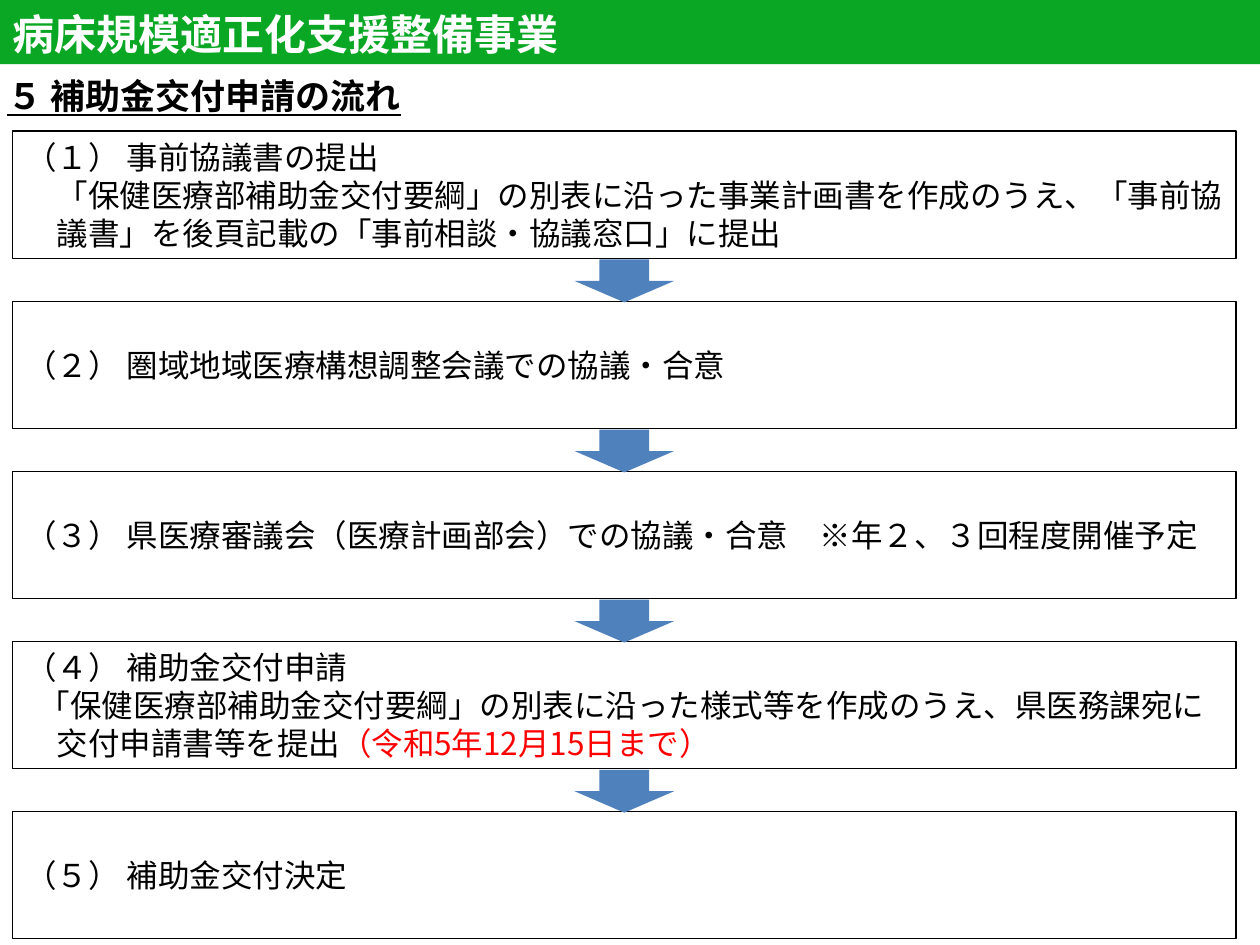
from pptx import Presentation
from pptx.dml.color import RGBColor
from pptx.enum.shapes import MSO_SHAPE
from pptx.enum.text import MSO_ANCHOR, PP_ALIGN
from pptx.oxml.ns import qn
from pptx.util import Inches, Pt

FONT = "Noto Sans CJK JP"
GREEN = RGBColor(0x09, 0xA7, 0x23)
BLUE = RGBColor(0x4F, 0x81, 0xBD)
RED = RGBColor(0xFF, 0x00, 0x00)
BLACK = RGBColor(0x00, 0x00, 0x00)
WHITE = RGBColor(0xFF, 0xFF, 0xFF)

BOX_LEFT, BOX_TOP, BOX_WIDTH, BOX_HEIGHT = 0.1, 1.04, 9.71, 1.01
STEP_PITCH = 1.35
ARROW_WIDTH, ARROW_HEIGHT = 0.79, 0.34
FULL_INDENT, HALF_INDENT = 0.25, 0.11

# Each step is a list of lines: left indent in inches, then (text, colour) runs
STEPS = [
    [
        (0, [("（１） 事前協議書の提出", BLACK)]),
        (FULL_INDENT, [("「保健医療部補助金交付要綱」の別表に沿った事業計画書を作成のうえ、「事前協", BLACK)]),
        (FULL_INDENT, [("議書」を後頁記載の「事前相談・協議窓口」に提出", BLACK)]),
    ],
    [(0, [("（２） 圏域地域医療構想調整会議での協議・合意", BLACK)])],
    [(0, [("（３） 県医療審議会（医療計画部会）での協議・合意　※年２、３回程度開催予定", BLACK)])],
    [
        (0, [("（４） 補助金交付申請", BLACK)]),
        (HALF_INDENT, [("「保健医療部補助金交付要綱」の別表に沿った様式等を作成のうえ、県医務課宛に", BLACK)]),
        (FULL_INDENT, [("交付申請書等を提出", BLACK), ("（令和5年12月15日まで）", RED)]),
    ],
    [(0, [("（５） 補助金交付決定", BLACK)])],
]


def add_block(kind, left, top, width, height, fill=None):
    block = page.shapes.add_shape(kind, Inches(left), Inches(top), Inches(width), Inches(height))
    block.shadow.inherit = False
    block.line.fill.background()
    if fill is None:
        block.fill.background()
    else:
        block.fill.solid()
        block.fill.fore_color.rgb = fill
    frame = block.text_frame
    frame.word_wrap = True
    frame.vertical_anchor = MSO_ANCHOR.MIDDLE
    frame.paragraphs[0].alignment = PP_ALIGN.LEFT
    return block


def add_span(para, text, size, color, bold=False, underline=False):
    """Add a run in the slide font, for both Latin and East Asian characters."""
    span = para.add_run()
    span.text = text
    font = span.font
    font.name, font.size, font.bold, font.underline = FONT, Pt(size), bold, underline
    font.color.rgb = color
    east_asian = span._r.get_or_add_rPr().makeelement(qn("a:ea"), {"typeface": FONT})
    span._r.rPr.find(qn("a:latin")).addnext(east_asian)


deck = Presentation()
deck.slide_width, deck.slide_height = Inches(10), Inches(7.5)
page = deck.slides.add_slide(deck.slide_layouts[6])

# Title band
band = add_block(MSO_SHAPE.RECTANGLE, 0, 0, 10, 0.51, GREEN)
band.text_frame.margin_top = band.text_frame.margin_bottom = 0
para = band.text_frame.paragraphs[0]
para.line_spacing = Pt(31)
add_span(para, "病床規模適正化支援整備事業", 24, WHITE, bold=True)

# Section heading
heading = page.shapes.add_textbox(Inches(-0.04), Inches(0.54), Inches(8.58), Inches(0.44))
heading.text_frame.word_wrap = True
heading.text_frame.vertical_anchor = MSO_ANCHOR.MIDDLE
add_span(heading.text_frame.paragraphs[0], "５ 補助金交付申請の流れ", 20, BLACK, bold=True, underline=True)

# Step boxes
for row, lines in enumerate(STEPS):
    box = add_block(MSO_SHAPE.RECTANGLE, BOX_LEFT, BOX_TOP + row * STEP_PITCH, BOX_WIDTH, BOX_HEIGHT)
    box.line.color.rgb = BLACK
    box.line.width = Pt(0.75)
    frame = box.text_frame
    frame.margin_right = 0
    for number, (indent, spans) in enumerate(lines):
        para = frame.add_paragraph() if number else frame.paragraphs[0]
        para.alignment = PP_ALIGN.LEFT
        para.line_spacing = Pt(21.7)
        para._p.get_or_add_pPr().set("marL", str(Inches(indent)))
        for text, color in spans:
            add_span(para, text, 18, color)

# Arrows between the boxes
for row in range(len(STEPS) - 1):
    top = BOX_TOP + BOX_HEIGHT + 0.01 + row * STEP_PITCH
    left = BOX_LEFT + (BOX_WIDTH - ARROW_WIDTH) / 2
    add_block(MSO_SHAPE.DOWN_ARROW, left, top, ARROW_WIDTH, ARROW_HEIGHT, BLUE)

deck.save("out.pptx")
